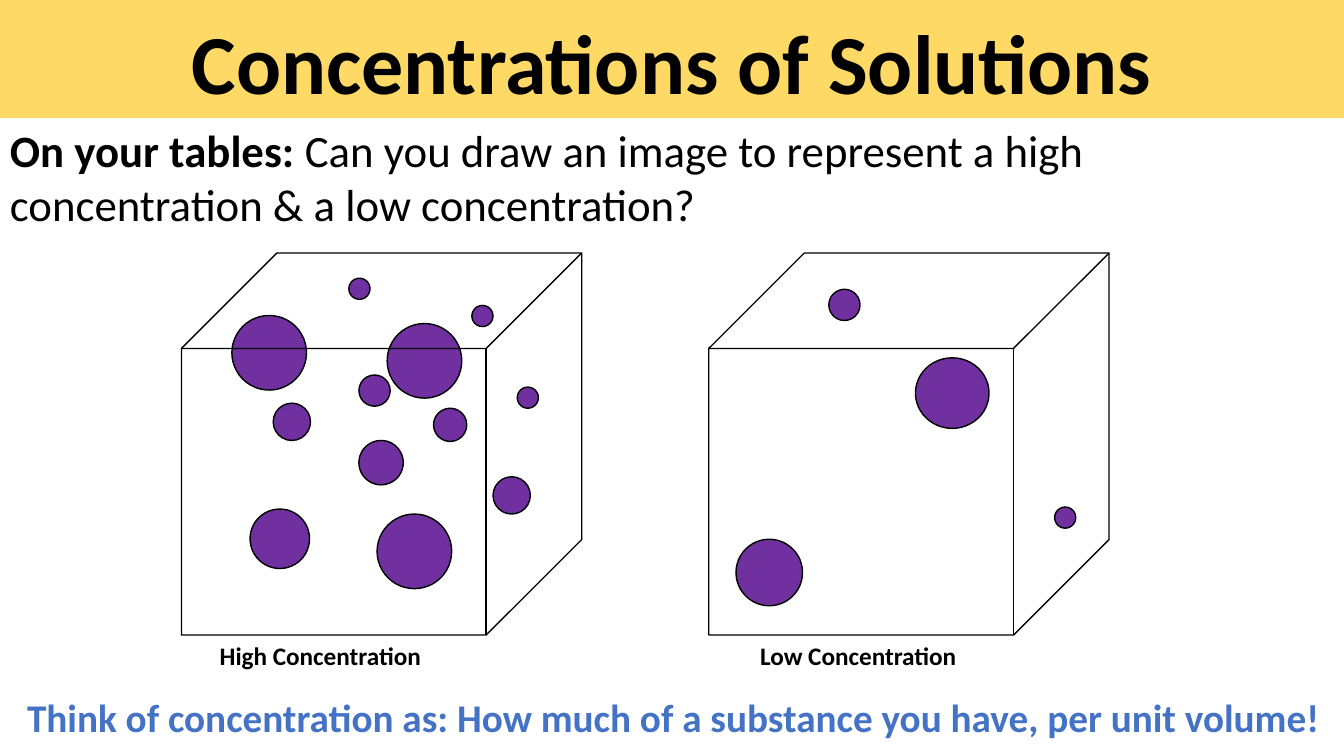
from dataclasses import dataclass

from pptx import Presentation
from pptx.dml.color import RGBColor
from pptx.enum.shapes import MSO_SHAPE
from pptx.enum.text import MSO_ANCHOR, MSO_AUTO_SIZE, PP_ALIGN
from pptx.util import Pt

EMU_PER_PX = 9144
SLIDE_WIDTH, SLIDE_HEIGHT = 1333, 750


@dataclass(frozen=True)
class Theme:
    font: str = "Calibri"
    ink: RGBColor = RGBColor(0x00, 0x00, 0x00)
    banner: RGBColor = RGBColor(0xFF, 0xD9, 0x66)
    particle: RGBColor = RGBColor(0x70, 0x30, 0xA0)
    accent: RGBColor = RGBColor(0x44, 0x72, 0xC4)
    title_size: int = 60
    question_size: int = 32
    summary_size: int = 28
    label_size: int = 18
    outline: int = 1


class SlideBuilder:
    """Draws themed elements on one slide, with lengths in px."""

    def __init__(self, slide, theme):
        self.slide = slide
        self.theme = theme

    def scale(self, *lengths):
        return [length * EMU_PER_PX for length in lengths]

    def add_run(self, paragraph, text, size, bold=True, color=None):
        run = paragraph.add_run()
        run.text = text
        run.font.name = self.theme.font
        run.font.size = Pt(size)
        run.font.bold = bold
        run.font.color.rgb = color or self.theme.ink

    def title(self, text, width, height):
        shape = self.slide.shapes.title
        shape.left, shape.top, shape.width, shape.height = self.scale(0, 0, width, height)
        shape.fill.solid()
        shape.fill.fore_color.rgb = self.theme.banner
        frame = shape.text_frame
        frame.auto_size = MSO_AUTO_SIZE.NONE
        frame.vertical_anchor = MSO_ANCHOR.BOTTOM
        paragraph = frame.paragraphs[0]
        paragraph.alignment = PP_ALIGN.CENTER
        paragraph.line_spacing = 0.9
        self.add_run(paragraph, text, self.theme.title_size)

    def text(self, box, runs, size, color=None, wrap=False):
        frame = self.slide.shapes.add_textbox(*self.scale(*box)).text_frame
        frame.word_wrap = wrap
        frame.auto_size = MSO_AUTO_SIZE.SHAPE_TO_FIT_TEXT
        for content, bold in runs:
            self.add_run(frame.paragraphs[0], content, size, bold, color)

    def outlined(self, kind, box):
        shape = self.slide.shapes.add_shape(kind, *self.scale(*box))
        shape.shadow.inherit = False
        shape.line.color.rgb = self.theme.ink
        shape.line.width = Pt(self.theme.outline)
        return shape

    def cube(self, left, top, width, height):
        self.outlined(MSO_SHAPE.CUBE, (left, top, width, height)).fill.background()

    def particle(self, left, top, width, height=None):
        shape = self.outlined(MSO_SHAPE.OVAL, (left, top, width, height or width))
        shape.fill.solid()
        shape.fill.fore_color.rgb = self.theme.particle


BACK_PARTICLES = [(384, 321, 74), (230, 313, 74)]
HIGH_PARTICLES = [
    (248, 505, 59), (356, 437, 44), (374, 510, 74), (271, 400, 37), (356, 372, 31),
    (430, 405, 33), (513, 384, 21), (489, 473, 37), (468, 303, 21), (346, 276, 21),
]
LOW_PARTICLES = [(730, 535, 66), (908, 355, 73, 70), (822, 287, 31), (1046, 503, 21)]
CUBES = [
    (180, "High Concentration", 208, 221),
    (703, "Low Concentration", 744, 217),
]


def main():
    theme = Theme()
    presentation = Presentation()
    presentation.slide_width = SLIDE_WIDTH * EMU_PER_PX
    presentation.slide_height = SLIDE_HEIGHT * EMU_PER_PX
    slide = presentation.slides.add_slide(presentation.slide_layouts[5])
    builder = SlideBuilder(slide, theme)

    builder.title("Concentrations of Solutions", SLIDE_WIDTH, 117)
    question = [
        ("On your tables: ", True),
        ("Can you draw an image to represent a high concentration & a low concentration?", False),
    ]
    builder.text((0, 117, 1300, 118), question, theme.question_size, wrap=True)

    for particle in BACK_PARTICLES:
        builder.particle(*particle)
    for cube_left, label, label_left, label_width in CUBES:
        builder.cube(cube_left, 251, 397, 379)
        builder.text((label_left, 630, label_width, 40), [(label, True)], theme.label_size)
    for particle in HIGH_PARTICLES + LOW_PARTICLES:
        builder.particle(*particle)

    summary = "Think of concentration as: How much of a substance you have, per unit volume!"
    builder.text((17, 683, 1317, 57), [(summary, True)], theme.summary_size, theme.accent)
    presentation.save("out.pptx")


if __name__ == "__main__":
    main()
